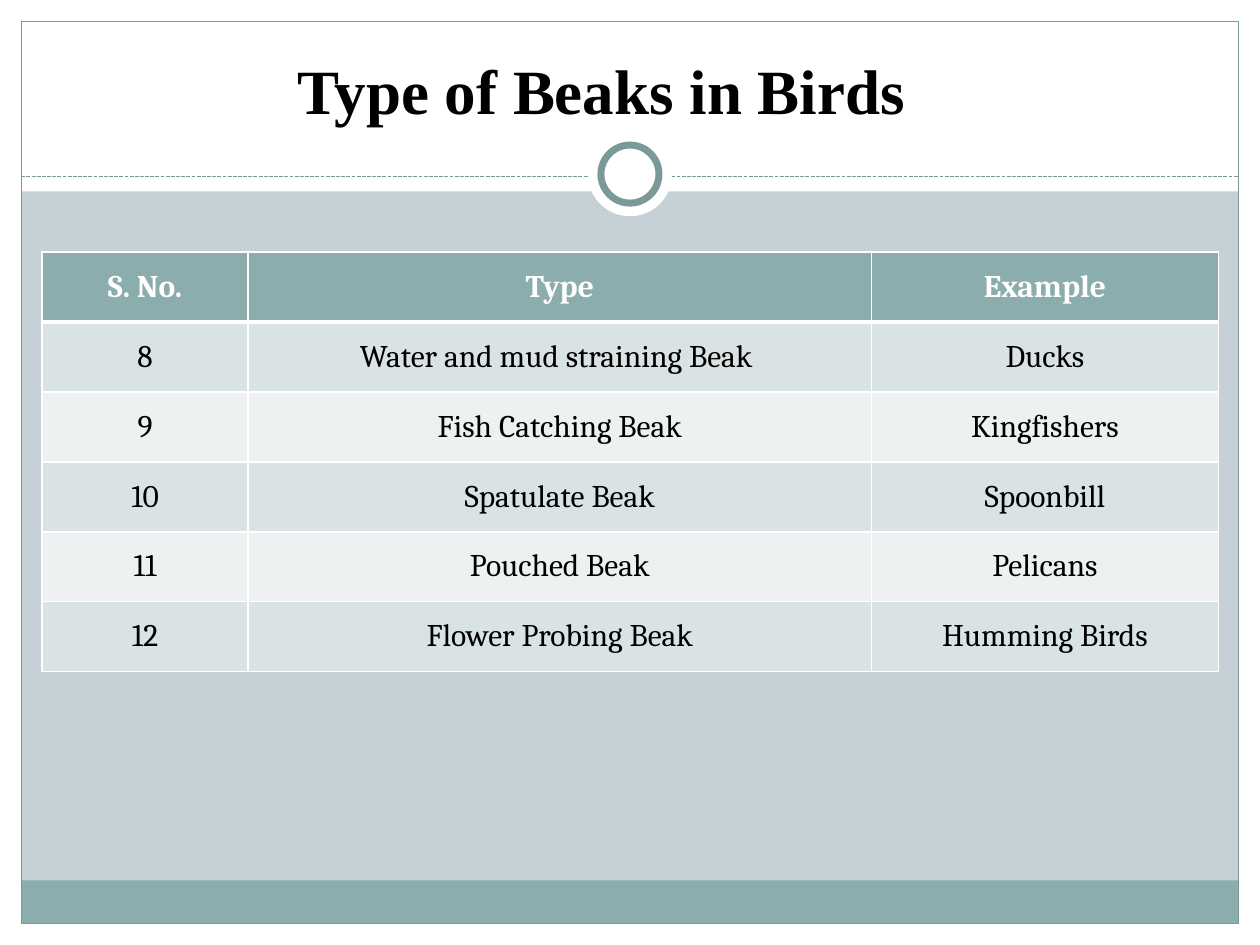
import pptx
import pptx.util
import pptx.dml.color
import pptx.enum.dml
import pptx.enum.shapes
import pptx.enum.text
from lxml import etree
from pptx.oxml.ns import qn
from pptx.util import Cm

WHITE, BLACK, TEAL, DARK_TEAL = "FFFFFF", "000000", "8CADAE", "7C999A"
BACKGROUND, BANDS = "C5D1D7", ("DAE3E3", "EEF1F2")
SHAPE = pptx.enum.shapes.MSO_SHAPE


def color(hex_code):
    return pptx.dml.color.RGBColor.from_string(hex_code)


class Deck:
    title_font, table_font = "Times New Roman", "Cambria"

    def __init__(self, width, height):
        self.prs = pptx.Presentation()
        self.prs.slide_width, self.prs.slide_height = Cm(width), Cm(height)
        self.s = self.prs.slides.add_slide(self.prs.slide_layouts[6])

    def background(self, fill):
        self.s.background.fill.solid()
        self.s.background.fill.fore_color.rgb = color(fill)

    def shape(self, kind, x, y, w, h, fill=None, line=None, weight=0.75):
        sp = self.s.shapes.add_shape(kind, Cm(x), Cm(y), Cm(w), Cm(h))
        sp.shadow.inherit = False
        if fill:
            sp.fill.solid()
            sp.fill.fore_color.rgb = color(fill)
        else:
            sp.fill.background()
        if line:
            sp.line.color.rgb = color(line)
            sp.line.width = pptx.util.Pt(weight)
        else:
            sp.line.fill.background()

    def dashed_line(self, x1, y1, x2, y2, line):
        cx = self.s.shapes.add_connector(
            pptx.enum.shapes.MSO_CONNECTOR.STRAIGHT, Cm(x1), Cm(y1), Cm(x2), Cm(y2))
        cx.line.color.rgb = color(line)
        cx.line.width = pptx.util.Pt(0.75)
        cx.line.dash_style = pptx.enum.dml.MSO_LINE.SQUARE_DOT
        etree.SubElement(cx._element.spPr, qn("a:effectLst"))

    def add_text(self, tf, text, font, size, ink, bold):
        p = tf.paragraphs[0]
        p.alignment = pptx.enum.text.PP_ALIGN.CENTER
        r = p.add_run()
        r.text = text
        r.font.name, r.font.size, r.font.bold = font, pptx.util.Pt(size), bold
        r.font.color.rgb = color(ink)

    def title(self, text, x, y, w, h):
        tf = self.s.shapes.add_textbox(Cm(x), Cm(y), Cm(w), Cm(h)).text_frame
        tf.word_wrap = True
        tf.vertical_anchor = pptx.enum.text.MSO_ANCHOR.MIDDLE
        self.add_text(tf, text, self.title_font, 36, BLACK, True)

    def border(self, cell, side, weight):
        ln = etree.SubElement(cell._tc.get_or_add_tcPr(), qn("a:ln" + side),
                              w=str(pptx.util.Pt(weight)))
        fill = etree.SubElement(ln, qn("a:solidFill"))
        etree.SubElement(fill, qn("a:srgbClr"), val=WHITE)

    def table(self, rows, x, y, col_widths, row_height):
        table = self.s.shapes.add_table(
            len(rows), len(col_widths), Cm(x), Cm(y),
            Cm(sum(col_widths)), Cm(row_height * len(rows))).table
        for column, width in zip(table.columns, col_widths):
            column.width = Cm(width)
        for i, row in enumerate(rows):
            table.rows[i].height = Cm(row_height)
            header = i == 0
            for j, text in enumerate(row):
                cell = table.cell(i, j)
                cell.vertical_anchor = pptx.enum.text.MSO_ANCHOR.MIDDLE
                self.add_text(cell.text_frame, text, self.table_font, 18,
                              WHITE if header else BLACK, header)
                # Borders come before the fill in the cell properties
                for side in "LRTB":
                    under_header = (i, side) in ((0, "B"), (1, "T"))
                    self.border(cell, side, 3 if under_header else 1)
                cell.fill.solid()
                cell.fill.fore_color.rgb = color(TEAL if header else BANDS[(i - 1) % 2])


def main():
    width, height, margin = 25.4, 19.05, 0.43
    inner_w, inner_h = width - 2 * margin, height - 2 * margin
    deck = Deck(width, height)
    deck.background(BACKGROUND)

    # White margins and title band
    for box in ((0, height - margin, width, margin), (0, 0, width, 3.86),
                (0, 0, margin, height), (width - margin, 0, margin, height)):
        deck.shape(SHAPE.RECTANGLE, *box, fill=WHITE)

    # Footer bar, frame and divider
    deck.shape(SHAPE.RECTANGLE, margin, 17.75, inner_w, 0.87, fill=TEAL)
    deck.shape(SHAPE.RECTANGLE, margin, margin, inner_w, inner_h, line=DARK_TEAL)
    deck.dashed_line(margin, 3.56, width - margin, 3.56, DARK_TEAL)

    # Ring on the divider
    for size, line in ((1.7, None), (1.17, DARK_TEAL)):
        deck.shape(SHAPE.OVAL, (width - size) / 2, 3.51 - size / 2, size, size,
                   fill=WHITE, line=line, weight=4)

    # Beak table
    deck.table([
        (" S. No. ", "Type", "Example"),
        ("8", "Water and mud straining Beak ", "Ducks"),
        ("9", "Fish Catching Beak", "Kingfishers"),
        ("10", "Spatulate Beak", "Spoonbill"),
        ("11", "Pouched Beak", "Pelicans"),
        ("12", "Flower Probing Beak", "Humming Birds"),
    ], 0.85, 5.08, (4.15, 12.57, 6.99), 1.41)

    # Title
    deck.title("Type of Beaks in Birds ", 2.12, 0.85, 20.32, 1.9)

    deck.prs.save("out.pptx")


if __name__ == "__main__":
    main()
